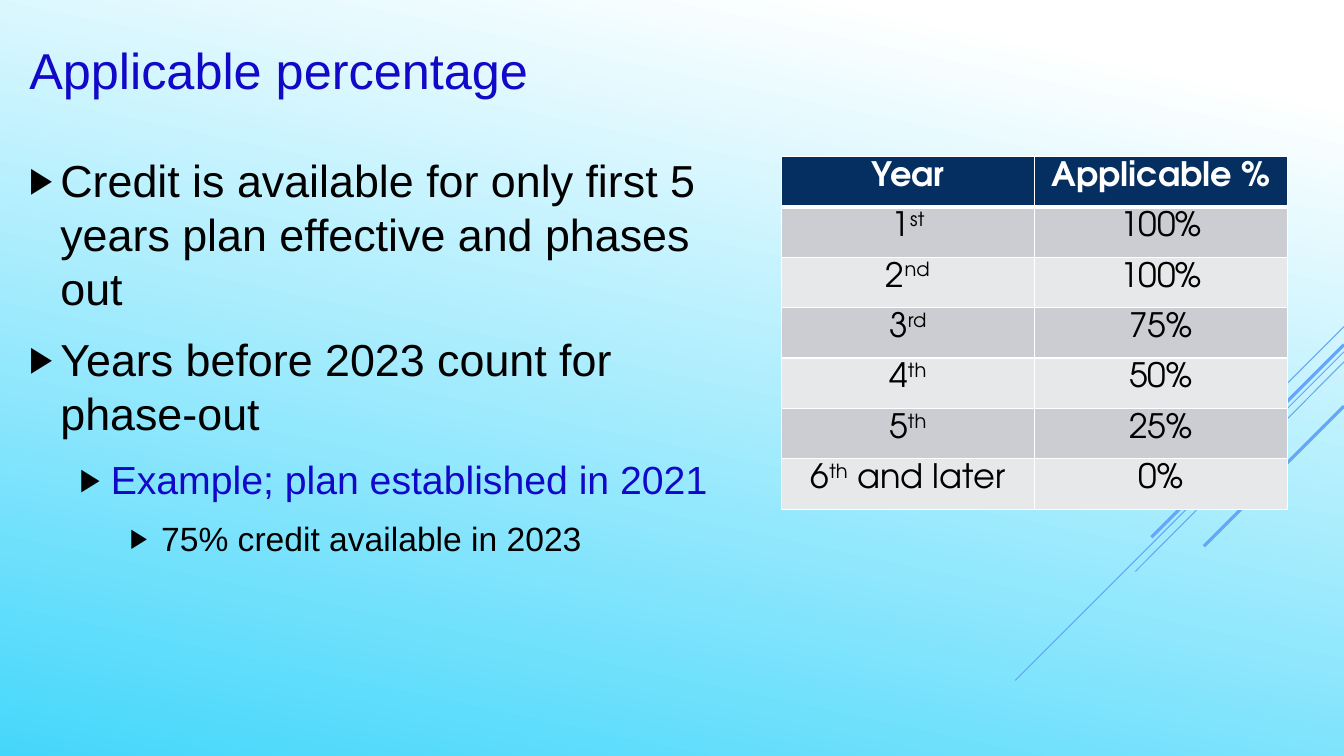
from dataclasses import dataclass

from lxml.etree import SubElement
from pptx import Presentation
from pptx.dml.color import RGBColor
from pptx.enum.shapes import MSO_CONNECTOR
from pptx.enum.text import MSO_ANCHOR, PP_ALIGN
from pptx.oxml.ns import qn
from pptx.util import Inches, Pt


@dataclass(frozen=True)
class Theme:
    body_font: str = "Arial"
    table_font: str = "TeX Gyre Adventor"
    accent: str = "1108C8"
    black: str = "000000"
    white: str = "FFFFFF"
    sky: str = "45D7FB"
    ray: str = "64A7F7"
    header: str = "052F61"
    bands: tuple = ("CCCDD2", "E7E8EA")
    title_size: int = 36
    level_sizes: tuple = (32, 28, 24)
    table_size: int = 24


THEME = Theme()

RAYS = [
    (3.24, 12.33, 4.24, 0.75),
    (3.49, 10.07, 6.75, 0.75),
    (3.59, 11.26, 5.67, 0.75),
    (3.42, 11.42, 5.33, 2.25),
    (4.03, 11.94, 5.42, 2.25),
]

POINTS = [
    (0, "Credit is available for only first 5 years plan effective and phases out", THEME.black),
    (0, "Years before 2023 count for phase-out", THEME.black),
    (1, "Example; plan established in 2021", THEME.accent),
    (2, "75% credit available in 2023", THEME.black),
]

HEADINGS = ("Year", "Applicable %")
PERCENTAGES = [
    (("1", "st", ""), "100%"),
    (("2", "nd", ""), "100%"),
    (("3", "rd", ""), "75%"),
    (("4", "th", ""), "50%"),
    (("5", "th", ""), "25%"),
    (("6", "th", " and later"), "0%"),
]


def rgb(color):
    return RGBColor.from_string(color)


def style_font(font, name, size, color, bold=False):
    font.name = name
    font.size = Pt(size)
    font.bold = bold
    font.color.rgb = rgb(color)


def paint_background(slide):
    fill = slide.background.fill
    fill.gradient()
    fill.gradient_angle = 258
    for stop, position, color in zip(fill.gradient_stops, (0.1, 1), (THEME.white, THEME.sky)):
        stop.position = position
        stop.color.rgb = rgb(color)


def add_ray(slide, start_y, end_x, end_y, weight):
    ray = slide.shapes.add_connector(
        MSO_CONNECTOR.STRAIGHT, Inches(13.33), Inches(start_y), Inches(end_x), Inches(end_y)
    )
    ray.line.color.rgb = rgb(THEME.ray)
    ray.line.width = Pt(weight)
    SubElement(ray._element.spPr, qn("a:effectLst"))


def set_title(slide, wording):
    title = slide.shapes.title
    title.left, title.top = Inches(0.19), Inches(0.01)
    title.width, title.height = Inches(11.64), Inches(1.35)
    frame = title.text_frame
    frame.text = wording
    frame.vertical_anchor = MSO_ANCHOR.MIDDLE
    heading = frame.paragraphs[0]
    heading.alignment = PP_ALIGN.LEFT
    style_font(heading.runs[0].font, THEME.body_font, THEME.title_size, THEME.accent)


def add_bullet(paragraph, level):
    properties = paragraph._p.get_or_add_pPr()
    properties.set("marL", str(Inches(0.31 + 0.5 * level)))
    properties.set("indent", str(Inches(-0.31)))
    SubElement(SubElement(properties, qn("a:buClr")), qn("a:srgbClr"), val=THEME.black)
    SubElement(properties, qn("a:buSzPct"), val="80000")
    SubElement(properties, qn("a:buFont"), typeface=THEME.body_font)
    SubElement(properties, qn("a:buChar"), char="▶")


def add_points(slide, points):
    body = slide.shapes.add_textbox(Inches(0.19), Inches(1.47), Inches(7.41), Inches(5.93))
    frame = body.text_frame
    frame.word_wrap = True
    for index, (level, wording, color) in enumerate(points):
        point = frame.add_paragraph() if index else frame.paragraphs[0]
        point.text = wording
        point.level = level
        add_bullet(point, level)
        size = THEME.level_sizes[level]
        point.space_before = Pt(0.2 * size if index else 0)
        point.space_after = Pt(6)
        style_font(point.runs[0].font, THEME.body_font, size, color)


def add_borders(cell, top, bottom):
    properties = cell._tc.get_or_add_tcPr()
    for side, weight in (("L", 1), ("R", 1), ("T", top), ("B", bottom)):
        border = SubElement(properties, qn(f"a:ln{side}"), w=str(Pt(weight)))
        SubElement(SubElement(border, qn("a:solidFill")), qn("a:srgbClr"), val=THEME.white)


def fill_cell(cell, pieces, row):
    is_header = row == 0
    add_borders(cell, 3 if row == 1 else 1, 3 if is_header else 1)
    cell.fill.solid()
    cell.fill.fore_color.rgb = rgb(THEME.header if is_header else THEME.bands[(row - 1) % 2])
    entry = cell.text_frame.paragraphs[0]
    entry.alignment = PP_ALIGN.CENTER
    for position, piece in enumerate(pieces):
        if not piece:
            continue
        run = entry.add_run()
        run.text = piece
        color = THEME.white if is_header else THEME.black
        style_font(run.font, THEME.table_font, THEME.table_size, color, is_header)
        if position == 1:
            run._r.get_or_add_rPr().set("baseline", "30000")


def add_percentages(slide, headings, percentages):
    rows = [((headings[0],), headings[1])] + percentages
    row_height = Inches(0.41)
    table = slide.shapes.add_table(
        len(rows), 2, Inches(7.75), Inches(1.55), Inches(5.02), row_height * len(rows)
    ).table
    for row, (year, percentage) in enumerate(rows):
        table.rows[row].height = row_height
        fill_cell(table.cell(row, 0), year, row)
        fill_cell(table.cell(row, 1), (percentage,), row)


def main():
    deck = Presentation()
    deck.slide_width, deck.slide_height = Inches(13.33), Inches(7.5)
    slide = deck.slides.add_slide(deck.slide_layouts.get_by_name("Title Only"))
    paint_background(slide)
    for ray in RAYS:
        add_ray(slide, *ray)
    set_title(slide, "Applicable percentage")
    add_points(slide, POINTS)
    add_percentages(slide, HEADINGS, PERCENTAGES)
    deck.save("out.pptx")


if __name__ == "__main__":
    main()
